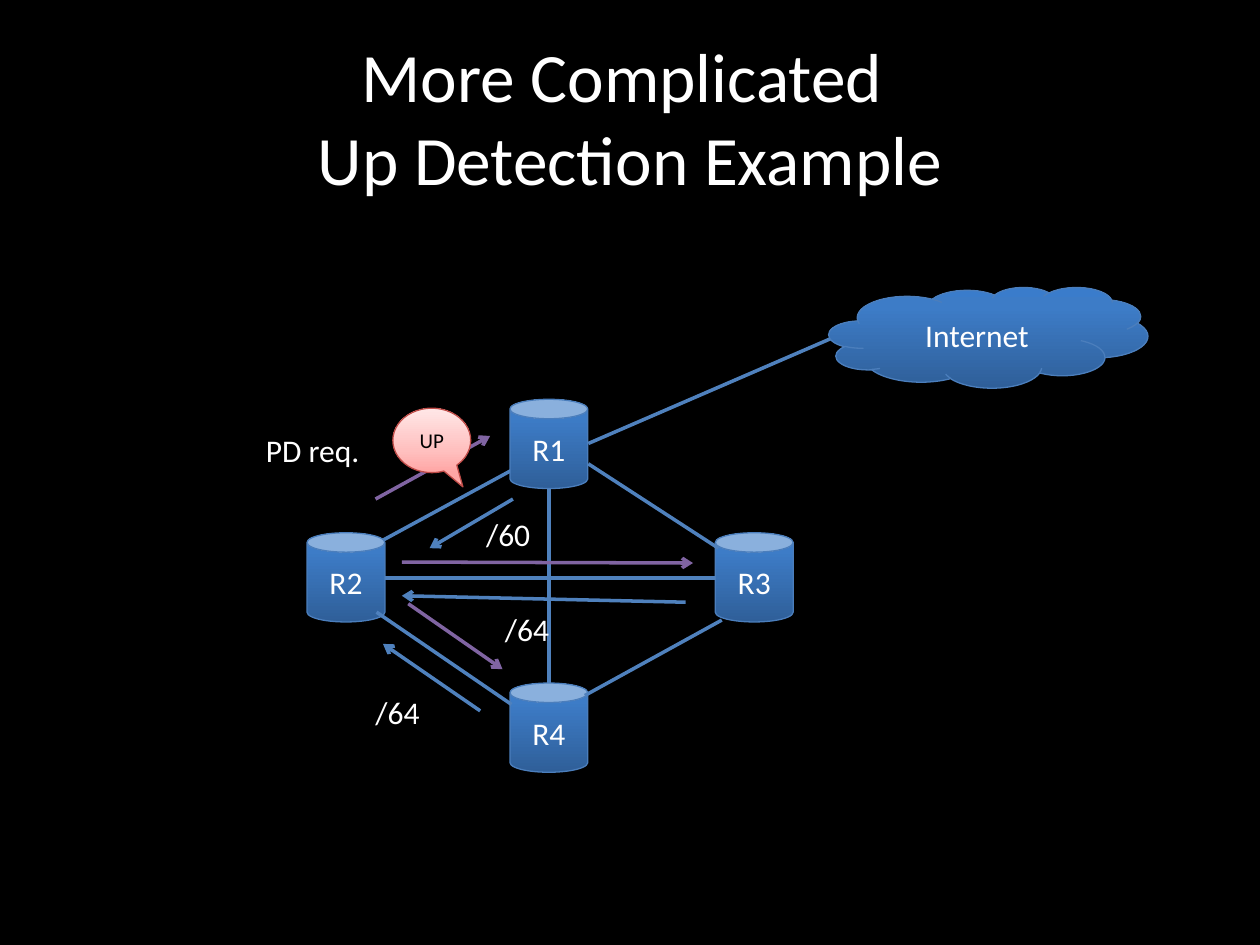
"""Builds the slide on up detection between four routers."""
from copy import deepcopy
from dataclasses import dataclass

from lxml import etree
from pptx import Presentation
from pptx.dml.color import RGBColor
from pptx.enum.shapes import MSO_CONNECTOR, MSO_SHAPE
from pptx.enum.text import MSO_ANCHOR, MSO_AUTO_SIZE, PP_ALIGN
from pptx.oxml.ns import qn
from pptx.util import Cm, Pt

CAN, CLOUD, CALLOUT = MSO_SHAPE.CAN, MSO_SHAPE.CLOUD, MSO_SHAPE.OVAL_CALLOUT
STRAIGHT = MSO_CONNECTOR.STRAIGHT
LEFT, CENTER = PP_ALIGN.LEFT, PP_ALIGN.CENTER
TOP, MIDDLE = MSO_ANCHOR.TOP, MSO_ANCHOR.MIDDLE
NO_FIT = MSO_AUTO_SIZE.NONE


@dataclass(frozen=True)
class Theme:
    font: str = "Calibri"
    title_size: float = 39.6
    label_size: float = 18
    callout_size: float = 12
    background: str = "000000"
    light_text: str = "FFFFFF"
    dark_text: str = "000000"
    link: str = "4F81BD"
    request: str = "8064A2"
    node_edge: str = "4B7EBC"
    callout_edge: str = "BF4C48"
    node_fill: tuple = ((0, "2F5F99"), (0.8, "3D7CC7"), (1, "3A7CCB"))
    callout_fill: tuple = ((0, "FFA6A5"), (0.35, "FFC0BF"), (1, "FFE7E7"))
    link_width: float = 2
    edge_width: float = 0.75


def write(frame, text, *, font, size, color, align=CENTER, anchor=MIDDLE):
    frame.text = text
    frame.word_wrap = True
    frame.auto_size = NO_FIT
    frame.vertical_anchor = anchor
    for paragraph in frame.paragraphs:
        paragraph.alignment = align
        for run in paragraph.runs:
            run.font.name = font
            run.font.size = Pt(size)
            run.font.color.rgb = RGBColor.from_string(color)


class NetworkSlide:
    def __init__(self, slide, theme):
        self.slide = slide
        self.theme = theme
        background = slide.background.fill
        background.solid()
        background.fore_color.rgb = RGBColor.from_string(theme.background)

    def title(self, text, left, top, width, height):
        heading = self.slide.shapes.title
        heading.left, heading.top = Cm(left), Cm(top)
        heading.width, heading.height = Cm(width), Cm(height)
        write(heading.text_frame, text, font=self.theme.font,
              size=self.theme.title_size, color=self.theme.light_text)

    def label(self, text, left, top, width=1.5, height=1.02):
        box = self.slide.shapes.add_textbox(Cm(left), Cm(top), Cm(width), Cm(height))
        write(box.text_frame, text, font=self.theme.font, size=self.theme.label_size,
              color=self.theme.light_text, align=LEFT, anchor=TOP)

    def link(self, start, end, color=None, arrow=False):
        line = self.slide.shapes.add_connector(
            STRAIGHT, *(Cm(length) for length in (*start, *end)))
        line.line.color.rgb = RGBColor.from_string(color or self.theme.link)
        line.line.width = Pt(self.theme.link_width)
        properties = line._element.spPr
        if arrow:
            etree.SubElement(properties.find(qn("a:ln")), qn("a:tailEnd"), type="arrow")
        etree.SubElement(properties, qn("a:effectLst"))

    def _shape(self, kind, text, place, stops, edge, size, color):
        shape = self.slide.shapes.add_shape(kind, *(Cm(length) for length in place))
        shape.shadow.inherit = False
        shape.fill.gradient()
        shape.fill.gradient_angle = 90
        stop_list = shape._element.spPr.find(qn("a:gradFill")).find(qn("a:gsLst"))
        stop_list.append(deepcopy(stop_list[-1]))
        for stop, (position, stop_color) in zip(shape.fill.gradient_stops, stops):
            stop.position = position
            stop.color.rgb = RGBColor.from_string(stop_color)
        shape.line.color.rgb = RGBColor.from_string(edge)
        shape.line.width = Pt(self.theme.edge_width)
        write(shape.text_frame, text, font=self.theme.font, size=size, color=color)
        return shape

    def node(self, kind, text, left, top, width=1.57, height=1.8):
        theme = self.theme
        self._shape(kind, text, (left, top, width, height), theme.node_fill,
                    theme.node_edge, theme.label_size, theme.light_text)

    def callout(self, text, place, tip):
        theme = self.theme
        bubble = self._shape(CALLOUT, text, place, theme.callout_fill,
                             theme.callout_edge, theme.callout_size, theme.dark_text)
        bubble.adjustments[0], bubble.adjustments[1] = tip


def main():
    presentation = Presentation()
    presentation.slide_width, presentation.slide_height = Cm(25.4), Cm(19.05)
    theme = Theme()
    network = NetworkSlide(
        presentation.slides.add_slide(presentation.slide_layouts[5]), theme)

    network.title("More Complicated \vUp Detection Example", 1.27, 0.76, 22.86, 3.18)

    uplinks = [((7.7, 10.9), (10.46, 9.4)), ((11.86, 8.94), (16.74, 6.83))]
    for start, end in uplinks:
        network.link(start, end)

    routers = {"R1": (10.28, 8.05), "R2": (6.19, 10.74),
               "R3": (14.42, 10.74), "R4": (10.28, 13.77)}
    for name, corner in routers.items():
        network.node(CAN, name, *corner)

    mesh = [((11.86, 9.35), (14.48, 11.05)), ((7.59, 12.34), (10.31, 14.2)),
            ((11.79, 14.02), (14.55, 12.5)), ((11.07, 9.86), (11.07, 13.77)),
            ((7.77, 11.65), (14.42, 11.65))]
    for start, end in mesh:
        network.link(start, end)

    network.node(CLOUD, "Internet", 16.71, 5.79, 6.43, 2.03)

    requests = [((7.57, 10.06), (9.88, 8.79)), ((8.1, 11.33), (13.97, 11.35)),
                ((8.23, 12.17), (10.13, 13.49))]
    delegations = [((10.34, 10.06), (8.66, 11.05)), ((13.82, 12.14), (8.1, 12.01)),
                   ((9.68, 14.33), (7.72, 12.98))]
    for flows, color in ((requests, theme.request), (delegations, theme.link)):
        for start, end in flows:
            network.link(start, end, color, arrow=True)

    network.label("PD req.", 5.11, 8.56, 2.84)
    prefixes = [("/60", 9.55, 10.26), ("/64", 9.93, 12.17), ("/64", 7.32, 13.84)]
    for prefix, left, top in prefixes:
        network.label(prefix, left, top)

    network.callout("UP", (7.92, 8.23, 1.57, 1.3), tip=(0.4, 0.72))
    presentation.save("out.pptx")


if __name__ == "__main__":
    main()
